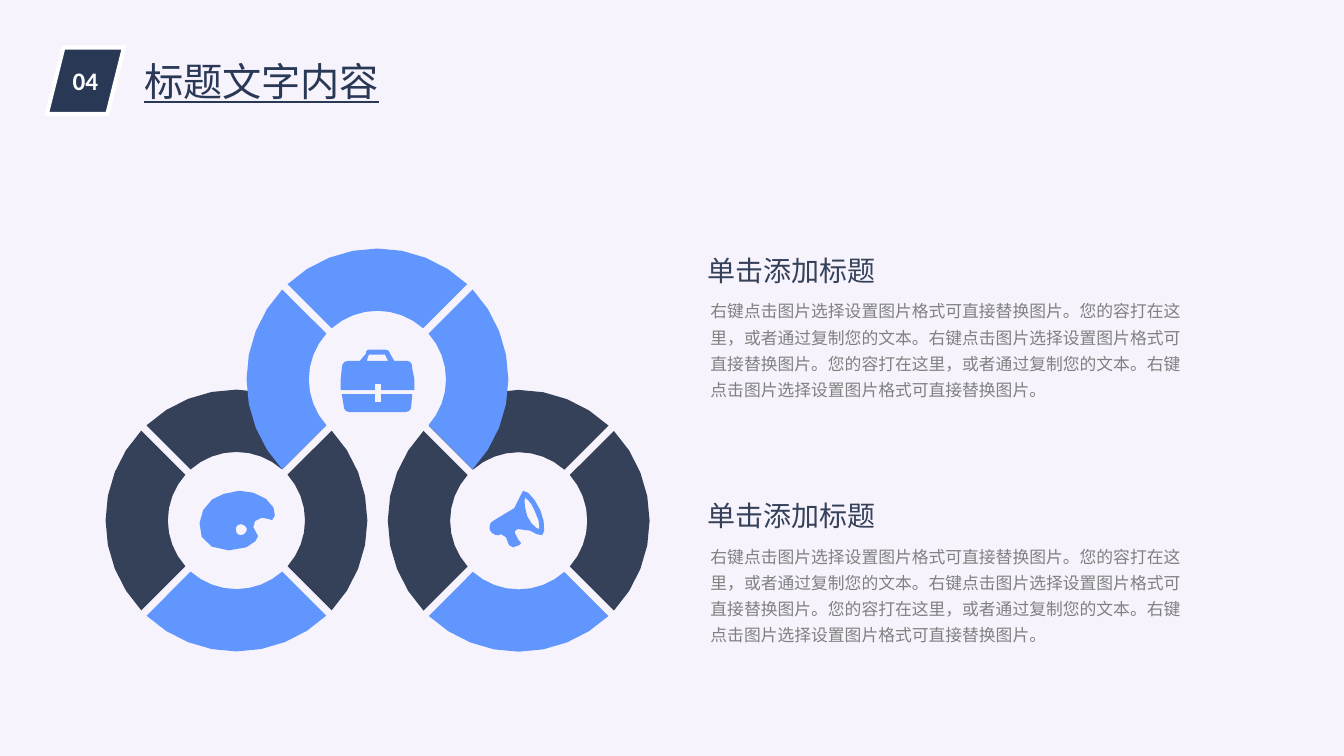
from math import asin, cos, pi, sin

from lxml.etree import SubElement
from pptx import Presentation
from pptx.dml.color import RGBColor
from pptx.enum.shapes import MSO_SHAPE
from pptx.enum.text import MSO_ANCHOR, MSO_AUTO_SIZE, PP_ALIGN
from pptx.oxml.ns import qn
from pptx.util import Pt

COLORS = {
    "background": "F7F3FD",
    "navy": "283855",
    "slate": "344159",
    "blue": "6196FF",
    "gray": "808080",
    "white": "FFFFFF",
}
CJK = "Noto Sans CJK SC"

# Text formats
NUMBER = {"size": Pt(18), "name": "Calibri", "color": "white", "bold": True}
TITLE = {"size": Pt(28), "name": CJK, "color": "navy", "underline": True}
HEADING = {"size": Pt(20), "name": CJK, "color": "slate"}
BODY = {"size": Pt(12), "name": CJK, "color": "gray"}

BODY_TEXT = (
    "右键点击图片选择设置图片格式可直接替换图片。您的容打在这里，或者通过复制您的文本。"
    "右键点击图片选择设置图片格式可直接替换图片。您的容打在这里，或者通过复制您的文本。"
    "右键点击图片选择设置图片格式可直接替换图片。"
)

# Ring geometry: radii and half the gap between segments, in points
OUTER, INNER, HALF_GAP = 93.5, 49, 2.7
ARC_STEPS, CURVE_STEPS = 8, 3
DIRECTIONS = {"right": 0, "bottom": pi / 2, "left": pi, "top": -pi / 2}

# Ring centre and segment colours, from back to front
RINGS = [
    (370.5, 372, {"left": "slate", "right": "slate", "bottom": "blue", "top": "slate"}),
    (168.9, 371.8, {"left": "slate", "right": "slate", "bottom": "blue", "top": "slate"}),
    (269.6, 271, {"left": "blue", "right": "blue", "top": "blue"}),
]

# Icon outlines on a grid of 0.72 pt: a pair is a corner, six numbers a Bézier curve
ICON_GRID = 0.72
PALETTE = [
    [(68, 11), (56, 3, 42, 0, 26, 6), (14, 8, 2, 22, 2, 35), (0, 50, 11, 62, 31, 62),
     (53, 62, 60, 51, 60, 48), (61, 46, 51, 39, 57, 33), (64, 26, 71, 32, 74, 32),
     (78, 30, 79, 19, 68, 11)],
    [(43, 47), (39, 47, 38, 44, 38, 41), (38, 39, 39, 36, 43, 36),
     (46, 36, 49, 39, 49, 41), (49, 44, 46, 47, 43, 47)],
]
BRIEFCASE = [
    [(34, 34), (40, 34), (40, 40), (73, 40), (73, 29), (71, 19),
     (71, 14, 70, 11, 65, 11), (53, 11), (49, 4), (48, 1, 47, 0, 44, 0),
     (28, 0), (26, 0, 25, 1, 25, 4), (19, 11), (8, 11),
     (3, 11, 1, 14, 1, 19), (0, 29), (0, 40), (34, 40)],
    [(27, 7), (28, 5), (31, 5), (42, 5), (44, 5), (45, 7), (47, 11), (26, 11)],
    [(40, 52), (34, 52), (34, 44), (1, 44), (3, 56),
     (3, 58, 4, 62, 9, 62), (64, 62), (69, 62, 70, 58, 70, 56),
     (71, 44), (40, 44)],
]
MEGAPHONE = [
    [(51, 20), (46, 9, 38, 0, 34, 1), (27, 4, 38, 18, 4, 31), (1, 32, 0, 37, 1, 40),
     (2, 43, 7, 46, 10, 45), (12, 44), (17, 47), (20, 55), (24, 57), (30, 55),
     (32, 53), (29, 49), (26, 43), (25, 42, 27, 39, 29, 39),
     (45, 38, 47, 47, 53, 45), (56, 44, 56, 31, 51, 20)],
    [(50, 39), (48, 39, 42, 35, 38, 26), (35, 17, 35, 8, 36, 8),
     (37, 8, 43, 13, 46, 22), (51, 31, 50, 38, 50, 39)],
]
ICONS = [(141.1, 348.5, PALETTE), (243.4, 249.8, BRIEFCASE), (349.2, 349.9, MEGAPHONE)]


def rgb(color):
    return RGBColor.from_string(COLORS[color])


def paint(shape, color):
    shape.shadow.inherit = False
    shape.fill.solid()
    shape.fill.fore_color.rgb = rgb(color)
    shape.line.fill.background()


def write(frame, text, style, align=PP_ALIGN.LEFT, spacing=None):
    paragraph = frame.paragraphs[0]
    paragraph.alignment = align
    paragraph.line_spacing = spacing
    run = paragraph.add_run()
    run.text = text
    for attribute, value in style.items():
        if attribute == "color":
            run.font.color.rgb = rgb(value)
        else:
            setattr(run.font, attribute, value)
    # East Asian glyphs take their own typeface entry
    SubElement(run._r.get_or_add_rPr(), qn("a:ea"), typeface=style["name"])


def add_text(slide, box, text, style, margin=7.2, **layout):
    frame = slide.shapes.add_textbox(*map(Pt, box)).text_frame
    frame.word_wrap = True
    frame.auto_size = MSO_AUTO_SIZE.SHAPE_TO_FIT_TEXT
    frame.margin_left = frame.margin_right = Pt(margin)
    write(frame, text, style, **layout)


def add_badge(slide, box, number):
    badge = slide.shapes.add_shape(MSO_SHAPE.PARALLELOGRAM, *map(Pt, box))
    paint(badge, "navy")
    badge.line.color.rgb = rgb("white")
    badge.line.width = Pt(3)
    badge.text_frame.vertical_anchor = MSO_ANCHOR.MIDDLE
    write(badge.text_frame, number, NUMBER, PP_ALIGN.CENTER)


def add_outline(slide, contours, color):
    contours = [[(Pt(x), Pt(y)) for x, y in contour] for contour in contours]
    builder = slide.shapes.build_freeform(*contours[0][0])
    for index, contour in enumerate(contours):
        if index:
            builder.move_to(*contour[0])
        builder.add_line_segments(contour[1:], close=True)
    paint(builder.convert_to_shape(), color)


def arc(center_x, center_y, radius, direction):
    half_angle = pi / 4 - asin(HALF_GAP / radius)
    angles = [direction + half_angle * (2 * i / ARC_STEPS - 1) for i in range(ARC_STEPS + 1)]
    return [(center_x + radius * cos(a), center_y + radius * sin(a)) for a in angles]


def add_ring(slide, center_x, center_y, segments):
    for side, color in segments.items():
        outer, inner = (arc(center_x, center_y, r, DIRECTIONS[side]) for r in (OUTER, INNER))
        add_outline(slide, [outer + inner[::-1]], color)


def flatten(contour):
    points = []
    for step in contour:
        if len(step) == 2:
            points.append(step)
            continue
        controls = [points[-1], step[:2], step[2:4], step[4:]]
        for i in range(1, CURVE_STEPS + 1):
            t = i / CURVE_STEPS
            weights = ((1 - t) ** 3, 3 * t * (1 - t) ** 2, 3 * t * t * (1 - t), t ** 3)
            points.append(tuple(
                sum(w * c[axis] for w, c in zip(weights, controls)) for axis in (0, 1)))
    return points


def add_icon(slide, left, top, contours):
    add_outline(slide, [
        [(left + x * ICON_GRID, top + y * ICON_GRID) for x, y in flatten(contour)]
        for contour in contours
    ], "blue")


def add_section(slide, top):
    add_text(slide, (500.4, top + 36.7, 361.4, 82.8), BODY_TEXT, BODY, spacing=1.3)
    add_text(slide, (491, top, 239, 43.2), "单击添加标题", HEADING, margin=14.4, spacing=1.3)


def main():
    deck = Presentation()
    deck.slide_width, deck.slide_height = Pt(960), Pt(540)
    slide = deck.slides.add_slide(deck.slide_layouts[6])
    slide.background.fill.solid()
    slide.background.fill.fore_color.rgb = rgb("background")

    # Header
    add_badge(slide, (33.4, 34, 55.2, 47.5), "04")
    add_text(slide, (88.6, 37.4, 196.6, 41), "标题文字内容", TITLE, align=PP_ALIGN.CENTER)

    # Interlocked rings with their icons
    for ring in RINGS:
        add_ring(slide, *ring)
    for icon in ICONS:
        add_icon(slide, *icon)

    # Text sections
    for top in (170.6, 345.6):
        add_section(slide, top)

    deck.save("out.pptx")


if __name__ == "__main__":
    main()
